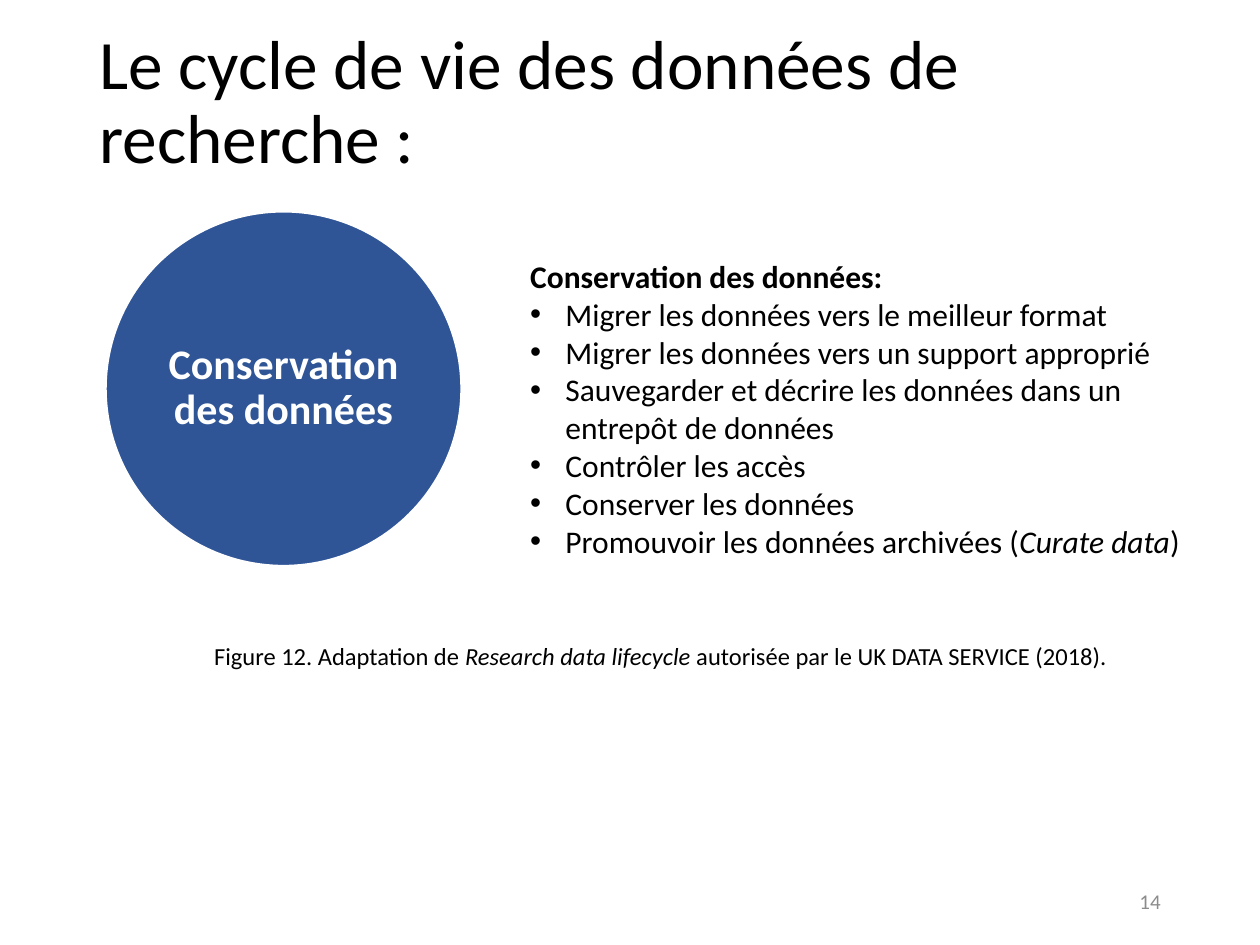
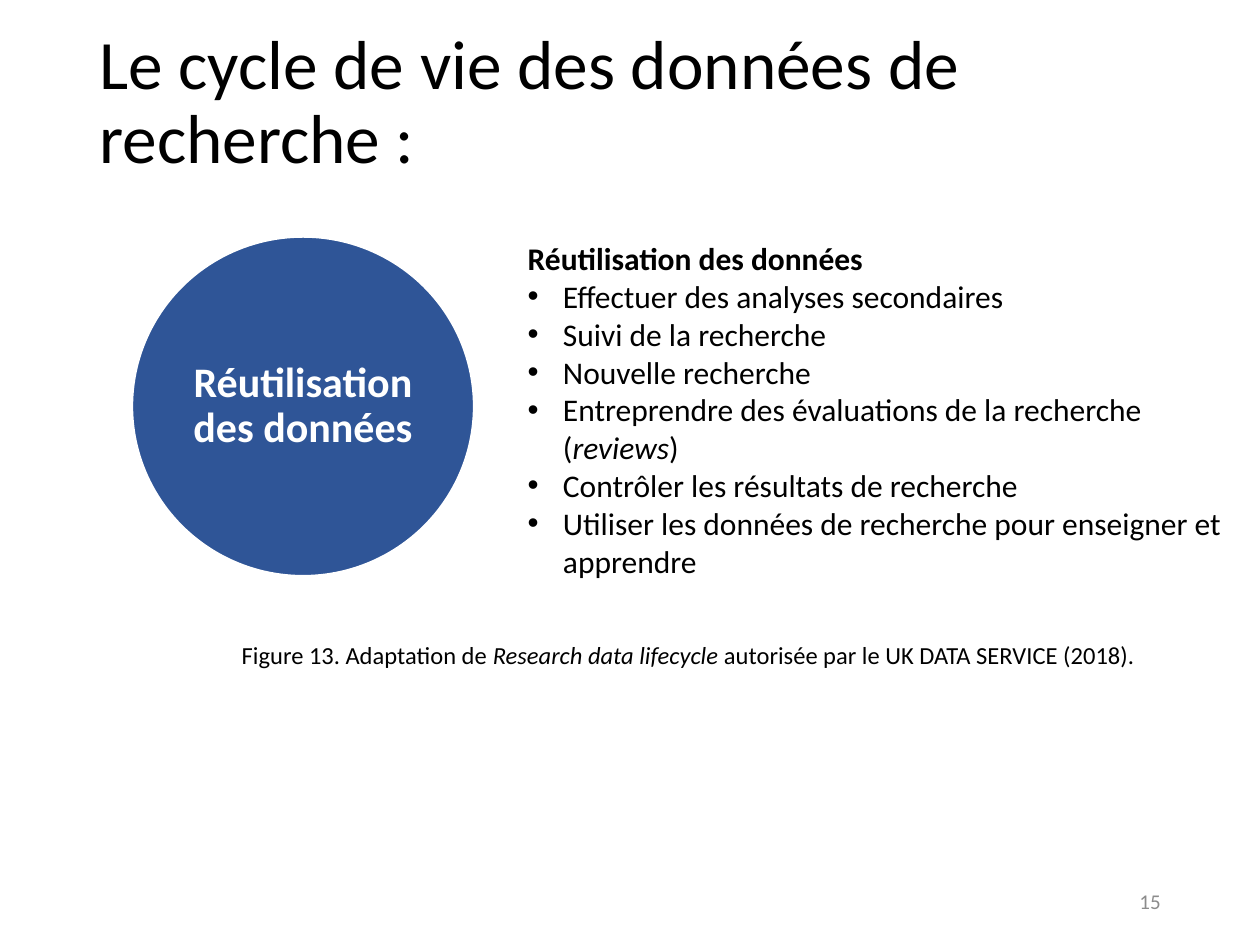
"""Build two slides on the life cycle of research data."""
from dataclasses import dataclass
from typing import Any

from lxml import etree
from pptx import Presentation, util as u
from pptx.dml.color import RGBColor
from pptx.enum import shapes, text
from pptx.oxml import ns

WIDTH, HEIGHT = u.Inches(10), u.Inches(7.5)
COLUMNS, ROWS = 100, 75
FONT = "Calibri"
BLACK, WHITE, GREY, BLUE = "000000", "FFFFFF", "8C8C8C", "2F5597"
TITLE = "Le cycle de vie des données de recherche :"
CAPTION = "Figure {}. Adaptation de *Research data lifecycle* autorisée par le UK DATA SERVICE (2018)."
BULLET_INDENT = u.Inches(0.28)
MIDDLE = text.MSO_ANCHOR.MIDDLE


@dataclass(frozen=True)
class Area:
    """Place on the slide, in grid columns and rows."""
    column: float
    row: float
    columns: float
    rows: float

    def lengths(self) -> tuple[int, int, int, int]:
        """Return left, top, width and height."""
        return (int(WIDTH * self.column / COLUMNS), int(HEIGHT * self.row / ROWS),
                int(WIDTH * self.columns / COLUMNS), int(HEIGHT * self.rows / ROWS))


@dataclass(frozen=True)
class Style:
    """Look of a block of text."""
    size: float
    color: str = BLACK
    bold: bool = False
    align: Any = text.PP_ALIGN.LEFT
    line_spacing: float = 1.0


@dataclass(frozen=True)
class Stage:
    """One stage of the life cycle and its slide."""
    number: int
    figure: int
    label: str
    heading: str
    tasks: tuple[str, ...]
    circle: Area
    task_list: Area
    caption: Area


TITLE_AREA = Area(6.9, 1, 86.2, 14.5)
NUMBER_AREA = Area(70.6, 69.5, 22.5, 4)
TITLE_STYLE = Style(39.6, line_spacing=0.9)
CIRCLE_STYLE = Style(24, WHITE, True, text.PP_ALIGN.CENTER, 0.9)
HEADING_STYLE = Style(18, bold=True)
TASK_STYLE = Style(18)
CAPTION_STYLE = Style(14)
NUMBER_STYLE = Style(12, GREY, align=text.PP_ALIGN.RIGHT)

STAGES = (
    Stage(14, 12, "Conservation des données", "Conservation des données:",
          ("Migrer les données vers le meilleur format",
           "Migrer les données vers un support approprié",
           "Sauvegarder et décrire les données dans un entrepôt de données",
           "Contrôler les accès",
           "Conserver les données",
           "Promouvoir les données archivées (*Curate data*)"),
          Area(8.4, 16.8, 28.2, 28.1), Area(41.1, 19.9, 57.4, 25.2), Area(16, 50.4, 73.5, 3.4)),
    Stage(15, 13, "Réutilisation des données", "Réutilisation des données",
          ("Effectuer des analyses secondaires",
           "Suivi de la recherche",
           "Nouvelle recherche",
           "Entreprendre des évaluations de la recherche (*reviews*)",
           "Contrôler les résultats de recherche",
           "Utiliser les données de recherche pour enseigner et apprendre"),
          Area(10.5, 18.8, 27.1, 26.9), Area(40.9, 18.5, 57.4, 28.3), Area(18.2, 50.3, 73.5, 3.4)),
)


def color(value: str) -> RGBColor:
    """Turn a hex string into a colour."""
    return RGBColor.from_string(value)


def apply(target: Any, formats: dict[str, Any]) -> None:
    """Set each named format on the target."""
    for name, value in formats.items():
        setattr(target, name, value)


def add_bullet(paragraph: Any) -> None:
    """Give a paragraph a hanging bullet."""
    properties = paragraph._p.get_or_add_pPr()
    properties.set("marL", str(BULLET_INDENT))
    properties.set("indent", str(-BULLET_INDENT))
    etree.SubElement(properties, ns.qn("a:buFont")).set("typeface", "Arial")
    etree.SubElement(properties, ns.qn("a:buChar")).set("char", "•")


def write(paragraph: Any, words: str, style: Style) -> None:
    """Write words in a paragraph, with starred parts in italics."""
    apply(paragraph, {"alignment": style.align, "line_spacing": style.line_spacing})
    for index, part in enumerate(words.split("*")):
        run = paragraph.add_run()
        run.text = part
        apply(run.font, {"name": FONT, "size": u.Pt(style.size), "bold": style.bold,
                         "italic": index % 2 == 1})
        run.font.color.rgb = color(style.color)


def add_text(slide: Any, area: Area, words: str, style: Style,
             anchor: Any = text.MSO_ANCHOR.TOP, wrap: bool = True) -> Any:
    """Add a text box and return its frame."""
    frame = slide.shapes.add_textbox(*area.lengths()).text_frame
    apply(frame, {"word_wrap": wrap, "vertical_anchor": anchor})
    write(frame.paragraphs[0], words, style)
    return frame


def add_circle(slide: Any, area: Area, label: str) -> None:
    """Add the labelled circle of a stage."""
    shape = slide.shapes.add_shape(shapes.MSO_SHAPE.OVAL, *area.lengths())
    shape.shadow.inherit = False
    shape.fill.solid()
    shape.fill.fore_color.rgb = color(BLUE)
    shape.line.color.rgb = color(WHITE)
    shape.line.width = u.Pt(1)
    margins = {f"margin_{side}": u.Inches(0.03) for side in ("left", "top", "right", "bottom")}
    apply(shape.text_frame, {"word_wrap": True, "vertical_anchor": MIDDLE, **margins})
    write(shape.text_frame.paragraphs[0], label, CIRCLE_STYLE)


def add_stage(presentation: Any, stage: Stage) -> None:
    """Add the slide of one stage."""
    slide = presentation.slides.add_slide(presentation.slide_layouts[6])
    add_text(slide, TITLE_AREA, TITLE, TITLE_STYLE, MIDDLE)
    add_circle(slide, stage.circle, stage.label)
    frame = add_text(slide, stage.task_list, stage.heading, HEADING_STYLE)
    for task in stage.tasks:
        paragraph = frame.add_paragraph()
        add_bullet(paragraph)
        write(paragraph, task, TASK_STYLE)
    add_text(slide, NUMBER_AREA, str(stage.number), NUMBER_STYLE, MIDDLE)
    add_text(slide, stage.caption, CAPTION.format(stage.figure), CAPTION_STYLE, wrap=False)


def main() -> None:
    """Build and save the presentation."""
    presentation = Presentation()
    apply(presentation, {"slide_width": WIDTH, "slide_height": HEIGHT})
    for stage in STAGES:
        add_stage(presentation, stage)
    presentation.save("out.pptx")


if __name__ == "__main__":
    main()
